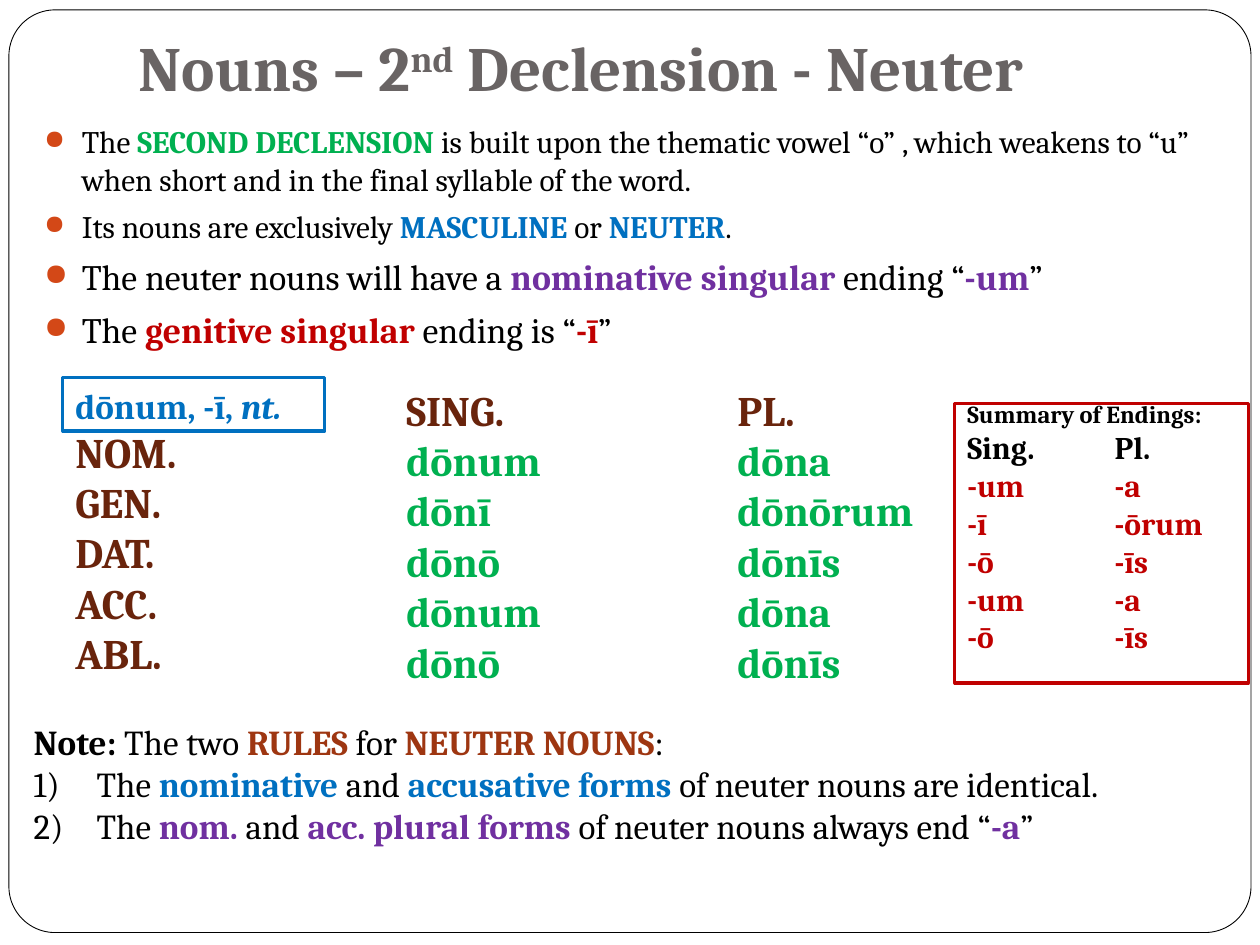
from lxml import etree
from pptx import Presentation
from pptx.dml.color import RGBColor
from pptx.enum import shapes, text
from pptx.oxml.ns import qn
from pptx.util import Cm, Pt

THEME = {
    "font": "Cambria",
    "colours": {
        "black": "000000", "white": "FFFFFF", "grey": "696464",
        "green": "00B050", "blue": "0070C0", "purple": "7030A0",
        "red": "C00000", "brown": "69240C", "rust": "9E3611",
        "bullet": "D34817",
    },
    "sizes": {"title": 36, "small": 17.9, "large": 20.4, "note": 20,
              "forms": 24, "heading": 14, "endings": 18},
}

# Content: a run is (text, colour, style); style holds b, i or ^ (superscript)
TITLE = [("Nouns – 2", "grey", "b"), ("nd", "grey", "b^"),
         (" Declension - Neuter", "grey", "b")]

POINTS = [
    ("small", [("The ",), ("SECOND DECLENSION ", "green", "b"),
               ("is built upon the thematic vowel “o” , which weakens to “u” "
                "when short and in the final syllable of the word.",)]),
    ("small", [("Its nouns are exclusively ",), ("MASCULINE ", "blue", "b"),
               ("or ",), ("NEUTER", "blue", "b"), (".",)]),
    ("large", [("The neuter nouns will have a ",),
               ("nominative singular ", "purple", "b"),
               ("ending “",), ("-um", "purple", "b"), ("”",)]),
    ("large", [("The ",), ("genitive singular ", "red", "b"),
               ("ending is “",), ("-ī", "red", "b"), ("”",)]),
]

LEMMA = [("dōnum, -ī, ", "blue", "b"), ("nt.", "blue", "bi")]
CASES = ["NOM.", "GEN.", "DAT.", "ACC.", "ABL."]
FORMS = {
    "SING.": ["dōnum", "dōnī", "dōnō", "dōnum", "dōnō"],
    "PL.": ["dōna", "dōnōrum", "dōnīs", "dōna", "dōnīs"],
}

SUMMARY_TITLE = "Summary of Endings:"
SUMMARY_HEAD = ("Sing.", "Pl.")
ENDINGS = [("-um", "-a"), ("-ī", "-ōrum"), ("-ō", "-īs"),
           ("-um", "-a"), ("-ō", "-īs")]

NOTE = [("Note: ", "black", "b"), ("The two ",), ("RULES ", "rust", "b"),
        ("for ",), ("NEUTER NOUNS", "rust", "b"), (":",)]
RULES = [
    [("The ",), ("nominative ", "blue", "b"), ("and ",),
     ("accusative forms ", "blue", "b"),
     ("of neuter nouns are identical.",)],
    [("The ",), ("nom. ", "purple", "b"), ("and ",),
     ("acc. plural forms ", "purple", "b"),
     ("of neuter nouns always end “",), ("-a", "purple", "b"), ("”",)],
]


def colour(name):
    return RGBColor.from_string(THEME["colours"][name])


def add_runs(para, runs, size):
    for words, tint, style in ((*run, "black", "")[:3] if len(run) == 1 else run
                               for run in runs):
        span = para.add_run()
        span.text = words
        font = span.font
        font.name, font.size = THEME["font"], Pt(THEME["sizes"][size])
        font.color.rgb = colour(tint)
        font.bold, font.italic = "b" in style, "i" in style
        if "^" in style:
            font._element.set("baseline", "30000")


def fill_frame(frame, lines):
    """Write (size, runs) lines as paragraphs and return the paragraphs."""
    frame.word_wrap = True
    paras = []
    for size, runs in lines:
        para = frame.add_paragraph() if paras else frame.paragraphs[0]
        add_runs(para, runs, size)
        paras.append(para)
    return paras


def add_text(parent, place, lines, grow=True):
    box = parent.add_textbox(*map(Cm, place))
    paras = fill_frame(box.text_frame, lines)
    box.text_frame.auto_size = (text.MSO_AUTO_SIZE.SHAPE_TO_FIT_TEXT if grow
                                else text.MSO_AUTO_SIZE.NONE)
    return box, paras


def add_frame(parent, kind, place, line, width, fill=None):
    box = parent.add_shape(kind, *map(Cm, place))
    box.shadow.inherit = False
    box.line.color.rgb, box.line.width = colour(line), Pt(width)
    if fill:
        box.fill.solid()
        box.fill.fore_color.rgb = colour(fill)
    else:
        box.fill.background()
    return box


def add_mark(para, indent, *marks):
    """Hang the paragraph and give it bullet elements of (tag, attributes)."""
    props = para._p.get_or_add_pPr()
    props.set("marL", str(Cm(indent)))
    props.set("indent", str(-Cm(indent)))
    for tag, attributes in marks:
        etree.SubElement(props, qn(tag), attributes)
    return props


def main():
    deck = Presentation()
    deck.slide_width, deck.slide_height = Cm(25.4), Cm(19.05)
    page = deck.slides.add_slide(deck.slide_layouts[5])
    parts = page.shapes

    # Page border, placed behind the title
    border = add_frame(parts, shapes.MSO_SHAPE.ROUNDED_RECTANGLE,
                       (0.18, 0.2, 25.04, 18.6), "black", 0.5, "white")
    border.adjustments[0] = 0.05
    parts._spTree.insert(2, border._element)

    # Title
    title = parts.title
    title.left, title.top, title.width, title.height = map(
        Cm, (2.54, 0.76, 21.59, 1.58))
    frame = title.text_frame
    frame.auto_size = text.MSO_AUTO_SIZE.NONE
    frame.vertical_anchor = text.MSO_ANCHOR.BOTTOM
    frame.margin_bottom = Cm(0.25)
    fill_frame(frame, [("title", TITLE)])[0].alignment = text.PP_ALIGN.LEFT

    # Bulleted points
    _, paras = add_text(parts, (0.64, 2.34, 24.13, 4.88), POINTS, grow=False)
    for para in paras:
        props = add_mark(para, 0.76, ("a:buClr", {}),
                         ("a:buSzPct", {"val": "85000"}),
                         ("a:buChar", {"char": "●"}))
        etree.SubElement(props.find(qn("a:buClr")), qn("a:srgbClr"),
                         {"val": THEME["colours"]["bullet"]})
        para.space_before = Pt(5.8)

    # Declension in three text columns
    lines = [("note", LEMMA)]
    lines += [("forms", [(case, "brown", "b")]) for case in CASES]
    for number, forms in FORMS.items():
        lines.append(("forms", [(number, "brown", "b")]))
        lines += [("forms", [(form, "green", "b")]) for form in forms]
    box, _ = add_text(parts, (1.27, 7.62, 20.52, 6.4), lines)
    box.text_frame._bodyPr.set("numCol", "3")
    add_frame(parts, shapes.MSO_SHAPE.RECTANGLE, (1.27, 7.62, 5.28, 1.07),
              "blue", 1.75)

    # Note with numbered rules
    _, paras = add_text(parts, (0.43, 14.4, 24.56, 2.82),
                        [("note", runs) for runs in [NOTE, *RULES]])
    for para in paras[1:]:
        add_mark(para, 1.27, ("a:buAutoNum", {"type": "arabicParenR"}))

    # Summary of endings, second column on a tab stop
    group = parts.add_group_shape().shapes
    lines = [("heading", [(SUMMARY_TITLE, "black", "b")])]
    lines += [("endings", [("\t".join(pair), tint, "b")])
              for pair, tint in [(SUMMARY_HEAD, "black"),
                                 *((pair, "red") for pair in ENDINGS)]]
    _, paras = add_text(group, (19.25, 7.92, 6.35, 5.46), lines)
    for para in paras[1:]:
        stops = etree.SubElement(para._p.get_or_add_pPr(), qn("a:tabLst"))
        etree.SubElement(stops, qn("a:tab"),
                         {"pos": str(Cm(2.97)), "algn": "l"})
    add_frame(group, shapes.MSO_SHAPE.RECTANGLE, (19.25, 8.13, 5.92, 5.64),
              "red", 1.75)

    deck.save("out.pptx")


if __name__ == "__main__":
    main()
